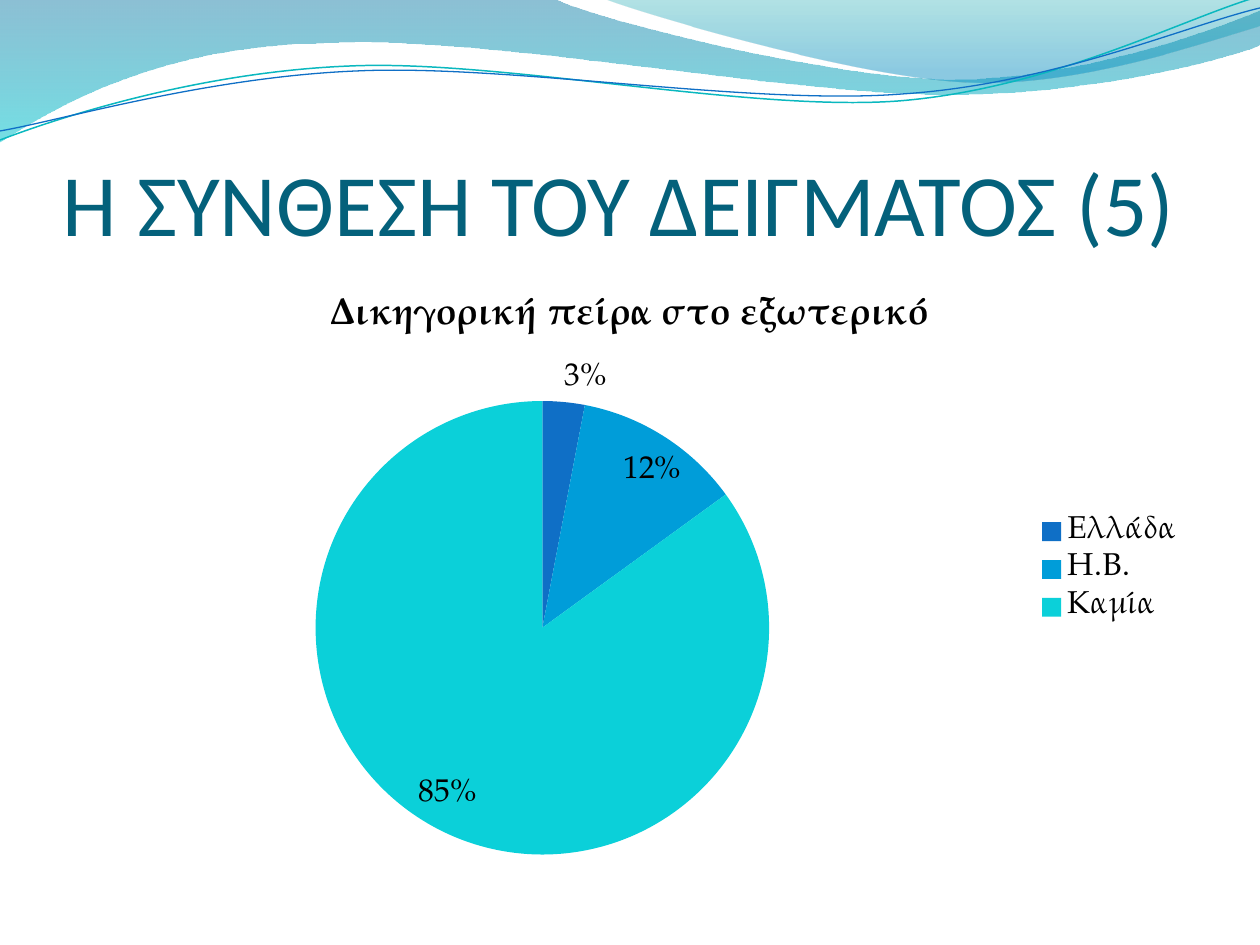
from itertools import chain, islice

from lxml import etree
from pptx import Presentation
from pptx.chart.data import CategoryChartData
from pptx.dml.color import RGBColor
from pptx.enum.chart import XL_CHART_TYPE, XL_LABEL_POSITION, XL_LEGEND_POSITION
from pptx.enum.text import MSO_ANCHOR
from pptx.oxml.ns import qn
from pptx.util import Pt

PIE = XL_CHART_TYPE.PIE
RIGHT = XL_LEGEND_POSITION.RIGHT
BEST = XL_LABEL_POSITION.BEST_FIT
BOTTOM = MSO_ANCHOR.BOTTOM

PX = 914400 / 126
HEAD_FONT, BODY_FONT = "Calibri", "TeX Gyre Pagella"
COLORS = {
    "title": "04617B", "text": "000000",
    "blue": "0F6FC6", "sky": "009DD9", "aqua": "0BD0D9",
    "teal": "0AB8BF", "deep": "0074A1", "cyan": "00C6CF",
    "sea": "00A1A9", "ocean": "008BBF",
}


def px(n):
    return round(n * PX)


def rgb(name):
    return RGBColor.from_string(COLORS[name])


def bend(shape, parts):
    """Merge the three lines of each three-point part into one cubic curve."""
    lines = iter(list(shape.element.iter(qn("a:lnTo"))))
    for part in parts:
        group = list(islice(lines, len(part)))
        if len(group) == 3:
            curve = etree.Element(qn("a:cubicBezTo"))
            group[0].addprevious(curve)
            for line in group:
                curve.append(line[0])
                line.getparent().remove(line)


class Deck:
    def __init__(self, wide, high):
        self.file = Presentation()
        self.file.slide_width, self.file.slide_height = px(wide), px(high)
        self.slide = self.file.slides.add_slide(self.file.slide_layouts[6])

    def style(self, font, face, size, color, bold=False):
        font.name, font.size, font.bold = face, Pt(size), bold
        font.color.rgb = rgb(color)

    def outline(self, start, parts, close):
        """Draw lines (one point) and cubic curves (three points)."""
        pen = self.slide.shapes.build_freeform(*start, scale=PX)
        pen.add_line_segments(chain(*parts), close=close)
        shape = pen.convert_to_shape()
        bend(shape, parts)
        shape.shadow.inherit = False
        return shape

    def wave(self, start, parts, stops):
        """Draw a see-through shape; stops hold colour, place and opacity."""
        shape = self.outline(start, parts, True)
        shape.line.fill.background()
        shape.fill.gradient()
        shape.fill.gradient_angle = 270
        for stop, (color, place, _) in zip(shape.fill.gradient_stops, stops):
            stop.color.rgb = rgb(color)
            stop.position = place / 100
        grad = shape.element.spPr.find(qn("a:gradFill"))
        for tone, (_, _, alpha) in zip(grad.iter(qn("a:srgbClr")), stops):
            etree.SubElement(tone, qn("a:alpha"), val=str(alpha * 1000))

    def curve(self, start, parts, color, width):
        shape = self.outline(start, parts, False)
        shape.fill.background()
        shape.line.color.rgb = rgb(color)
        shape.line.width = Pt(width)

    def title(self, box, text):
        frame = self.slide.shapes.add_textbox(*map(px, box)).text_frame
        frame.word_wrap = True
        frame.vertical_anchor = BOTTOM
        frame.margin_left = frame.margin_right = frame.margin_bottom = 0
        frame.margin_top = px(6)
        para = frame.paragraphs[0]
        para.text = text
        self.style(para.font, HEAD_FONT, 50, "title")

    def pie(self, box, name, rows):
        """Draw a pie; rows hold label, value and colour."""
        data = CategoryChartData(number_format="0%")
        data.categories = [label for label, _, _ in rows]
        data.add_series(name, [value for _, value, _ in rows])
        chart = self.slide.shapes.add_chart(PIE, *map(px, box), data).chart
        self.style(chart.font, BODY_FONT, 18, "text")
        chart.has_title = True
        para = chart.chart_title.text_frame.paragraphs[0]
        para.text = name
        self.style(para.font, BODY_FONT, 21.6, "text", True)
        chart.chart_title.include_in_layout = False
        chart.has_legend = True
        chart.legend.position = RIGHT
        chart.legend.include_in_layout = False
        plot = chart.plots[0]
        plot.vary_by_categories = True
        plot.has_data_labels = True
        labels = plot.data_labels
        labels.show_value, labels.show_percentage = True, False
        labels.number_format, labels.number_format_is_linked = "0%", False
        labels.position = BEST
        for i, (_, _, color) in enumerate(rows):
            fill = plot.series[0].points[i].format.fill
            fill.solid()
            fill.fore_color.rgb = rgb(color)


def main():
    deck = Deck(1260, 945)
    deck.wave((0, 0), [
        [(554, -1)],
        [(600, 21), (837, 79), (955, 79)],
        [(1074, 79), (1207, 33), (1260, 11)],
        [(1261, 45)],
        [(1239, 55), (1096, 96), (940, 94)],
        [(784, 94), (481, 35), (324, 43)],
        [(163, 45), (58, 105), (-1, 142)],
        [(0, 0)],
    ], [("deep", 0, 45), ("cyan", 100, 55)])
    deck.wave((604, -1), [
        [(641, 14), (859, 78), (969, 82)],
        [(1079, 87), (1211, 40), (1260, 26)],
        [(1260, 0)],
        [(604, -1)],
    ], [("sea", 0, 30), ("ocean", 80, 45)])
    deck.curve((0, 140), [
        [(60, 117), (199, 72), (349, 66)],
        [(498, 59), (747, 112), (898, 101)],
        [(1050, 89), (1182, 19), (1257, -3)],
    ], "teal", 0.85)
    deck.curve((0, 131), [
        [(59, 121), (207, 77), (357, 71)],
        [(508, 64), (752, 106), (903, 94)],
        [(1053, 84), (1185, 26), (1260, 8)],
    ], "blue", 0.75)
    deck.title((63, 97, 1134, 157), "Η ΣΥΝΘΕΣΗ ΤΟΥ ΔΕΙΓΜΑΤΟΣ (5)")
    deck.pie((63, 267, 1134, 605), "Δικηγορική πείρα στο εξωτερικό", [
        ("Ελλάδα", 0.03, "blue"),
        ("Η.Β.", 0.12, "sky"),
        ("Καμία", 0.85, "aqua"),
    ])
    deck.file.save("out.pptx")


if __name__ == "__main__":
    main()
